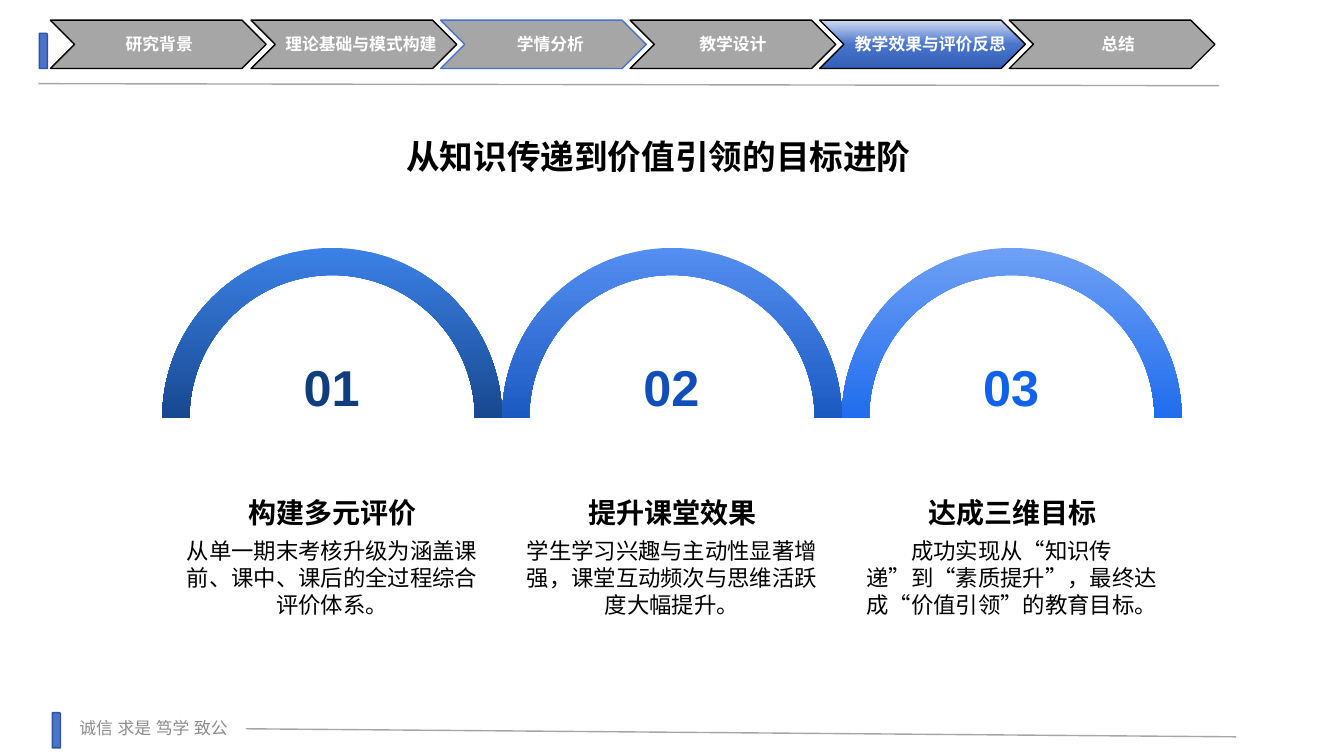
from copy import deepcopy

from lxml.etree import SubElement
from pptx import Presentation
from pptx.dml.color import RGBColor
from pptx.enum.lang import MSO_LANGUAGE_ID
from pptx.enum.shapes import MSO_CONNECTOR, MSO_SHAPE
from pptx.enum.text import MSO_ANCHOR, MSO_AUTO_SIZE, PP_ALIGN
from pptx.oxml.ns import qn
from pptx.util import Inches, Pt

LATIN, CHINESE = "Arial", "Noto Sans CJK SC"
BLUE, DARK_BLUE, GREY, BLACK, WHITE = "4874CB", "2E54A1", "A6A6A6", "000000", "FFFFFF"
ACTIVE_GRADIENT = [(0, "D1DCF2"), (50, BLUE), (100, "345FB6")]

# label, label left, fill, outline
STEPS = [
    ("研究背景", 0.73, GREY, BLACK),
    ("理论基础与模式构建", 2.73, GREY, BLACK),
    ("学情分析", 4.61, GREY, BLUE),
    ("教学设计", 6.42, GREY, BLACK),
    ("教学效果与评价反思", 8.38, ACTIVE_GRADIENT, BLACK),
    ("总结", 10.24, GREY, BLACK),
]

# heading, description, top colour, bottom colour
GOALS = [
    ("构建多元评价", "从单一期末考核升级为涵盖课前、课中、课后的全过程综合评价体系。",
     "3B81E6", "103D7E"),
    ("提升课堂效果", "学生学习兴趣与主动性显著增强，课堂互动频次与思维活跃度大幅提升。",
     "548EF0", "104FB9"),
    ("达成三维目标", "成功实现从“知识传递”到“素质提升”，最终达成“价值引领”的教育目标。",
     "6EA0F5", "1062EC"),
]


def color(value):
    return RGBColor.from_string(value)


class SlideBuilder:
    def __init__(self, slide):
        self.slide = slide

    def set_text(self, box, text, size=12, font=LATIN, ink=BLACK, bold=False,
                 align=PP_ALIGN.CENTER, anchor=MSO_ANCHOR.TOP, wrap=True,
                 grow=False, inset=(0.08, 0.05)):
        frame = box.text_frame
        frame.word_wrap = wrap
        frame.auto_size = MSO_AUTO_SIZE.SHAPE_TO_FIT_TEXT if grow else MSO_AUTO_SIZE.NONE
        frame.vertical_anchor = anchor
        frame.margin_left = frame.margin_right = Inches(inset[0])
        frame.margin_top = frame.margin_bottom = Inches(inset[1])
        para = frame.paragraphs[0]
        para.alignment = align
        para.line_spacing = 1.0
        span = para.add_run()
        span.text = text
        span.font.size = Pt(size)
        span.font.name = font
        span.font.bold = bold
        span.font.color.rgb = color(ink)
        span.font.language_id = MSO_LANGUAGE_ID.SIMPLIFIED_CHINESE
        SubElement(span.font._element, qn("a:ea"), typeface=font)

    def text(self, left, top, width, height, text, **style):
        box = self.slide.shapes.add_textbox(
            Inches(left), Inches(top), Inches(width), Inches(height))
        self.set_text(box, text, **style)

    def title(self, left, top, width, height, text, **style):
        box = self.slide.shapes.title
        box.left, box.top = Inches(left), Inches(top)
        box.width, box.height = Inches(width), Inches(height)
        self.set_text(box, text, **style)

    def shape(self, kind, left, top, width, height, fill, outline=None):
        """Add a preset shape; fill is a hex string or a list of gradient stops."""
        box = self.slide.shapes.add_shape(
            kind, Inches(left), Inches(top), Inches(width), Inches(height))
        box.shadow.inherit = False
        if isinstance(fill, str):
            box.fill.solid()
            box.fill.fore_color.rgb = color(fill)
        else:
            self.gradient(box, fill)
        if outline:
            box.line.color.rgb = color(outline)
            box.line.width = Pt(1)
        else:
            box.line.fill.background()
        return box

    def gradient(self, box, stops):
        """Fill from top to bottom with (percent, colour) stops."""
        box.fill.gradient()
        box.fill.gradient_angle = 270
        stop_list = box._element.spPr.find(".//" + qn("a:gsLst"))
        while len(stop_list) < len(stops):
            stop_list.append(deepcopy(stop_list[-1]))
        for stop, (percent, value) in zip(box.fill.gradient_stops, stops):
            stop.position = percent / 100
            stop.color.rgb = color(value)

    def line(self, x1, y1, x2, y2):
        rule = self.slide.shapes.add_connector(
            MSO_CONNECTOR.STRAIGHT, Inches(x1), Inches(y1), Inches(x2), Inches(y2))
        rule.line.color.rgb = color(GREY)
        rule.line.width = Pt(1)
        SubElement(rule._element.spPr, qn("a:effectLst"))

    def marker(self, left, top):
        self.shape(MSO_SHAPE.ROUND_1_RECTANGLE, left, top, 0.08, 0.35, BLUE, DARK_BLUE)

    def navigation(self):
        self.marker(0.39, 0.33)
        for index, (label, label_left, fill, outline) in enumerate(STEPS):
            left, width = (0.61 + 1.88 * index, 2.04) if index else (0.5, 2.14)
            self.shape(MSO_SHAPE.CHEVRON, left, 0.2, width, 0.48, fill, outline)
            self.text(label_left, 0.29, 1.7, 0.3, label, ink=WHITE, bold=True, grow=True)
        self.line(0.38, 0.83, 12.09, 0.85)

    def footer(self):
        self.marker(0.52, 7.07)
        self.text(0.69, 7.07, 2.9, 0.3, "诚信 求是 笃学 致公", ink="8C8C8C",
                  align=PP_ALIGN.LEFT, grow=True, inset=(0.1, 0.05))
        self.line(2.44, 7.23, 12.26, 7.31)

    def goal(self, index, heading, description, top_color, bottom_color):
        size = 3.37
        left = 1.61 + size * index
        arc = self.shape(MSO_SHAPE.BLOCK_ARC, left, 2.46, size, size,
                         [(0, top_color), (60, bottom_color)])
        arc.adjustments[2] = 0.08
        self.text(left + 1.3, 3.48, 0.76, 0.71, f"{index + 1:02}", size=36,
                  ink=bottom_color, bold=True, anchor=MSO_ANCHOR.MIDDLE, wrap=False)
        self.text(left + 0.14, 4.46, 3.1, 0.81, heading, size=20, font=CHINESE,
                  bold=True, anchor=MSO_ANCHOR.BOTTOM, inset=(0.1, 0.02))
        self.text(left + 0.14, 5.28, 3.09, 1.26, description, size=16, font=CHINESE)


def main():
    deck = Presentation()
    deck.slide_width, deck.slide_height = Inches(13.33), Inches(7.5)
    page = SlideBuilder(deck.slides.add_slide(deck.slide_layouts[5]))
    page.navigation()
    page.footer()
    page.title(0.59, 0.96, 11.88, 0.81, "从知识传递到价值引领的目标进阶", size=24,
               font=CHINESE, bold=True, anchor=MSO_ANCHOR.BOTTOM, inset=(0.1, 0.02))
    for index, goal in enumerate(GOALS):
        page.goal(index, *goal)
    deck.save("out.pptx")


if __name__ == "__main__":
    main()
